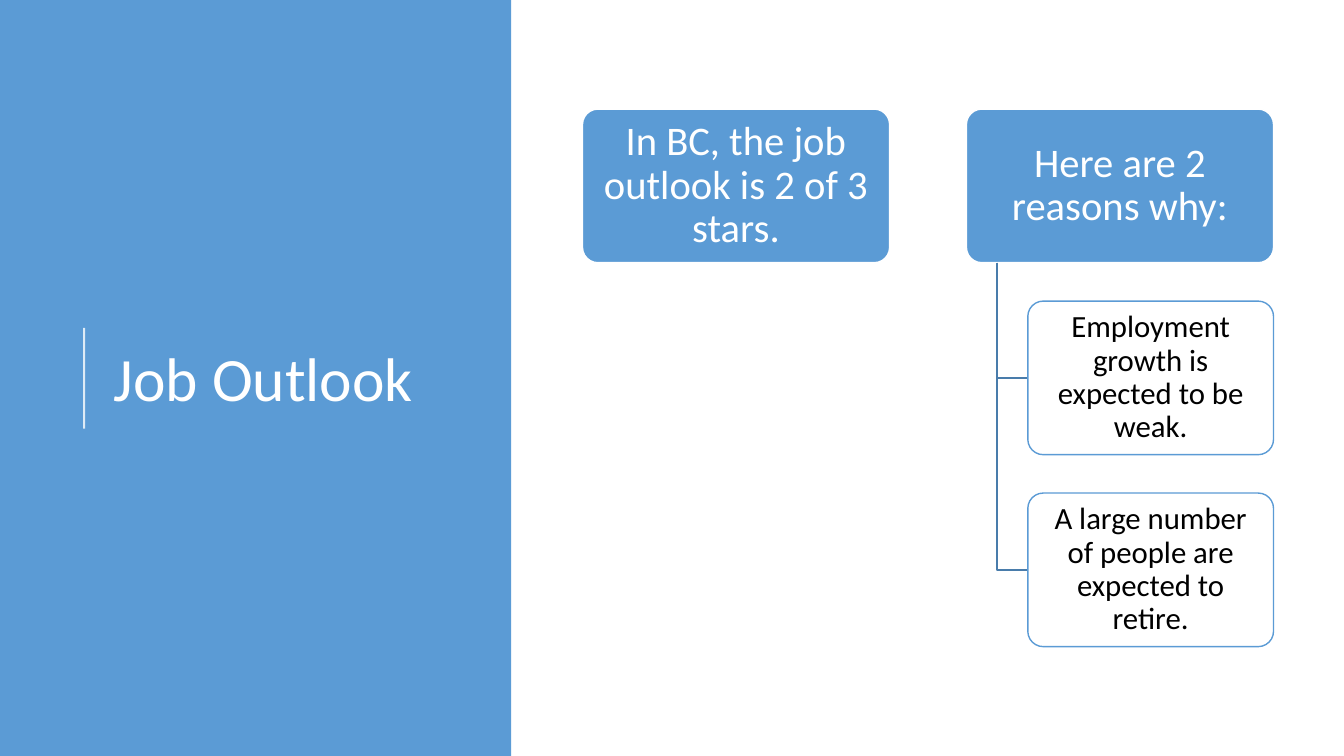
from lxml.etree import SubElement
from pptx import Presentation
from pptx.dml.color import RGBColor
from pptx.enum.shapes import MSO_CONNECTOR as Connector, MSO_SHAPE as Shape
from pptx.enum.text import MSO_ANCHOR as Anchor, PP_ALIGN as Align
from pptx.oxml.ns import qn
from pptx.util import Cm, Pt

TITLE = "Job Outlook"
BRANCHES = [
    ("In BC, the job outlook is 2 of 3 stars.", []),
    ("Here are 2 reasons why:", [
        "Employment growth is expected to be weak.",
        "A large number of people are expected to retire.",
    ]),
]

FONT = "Calibri"
BLUE, ELBOW_BLUE, WHITE, BLACK = "5B9BD5", "497CAB", "FFFFFF", "000000"

# Lengths in centimetres
SLIDE_WIDTH, SLIDE_HEIGHT = 33.87, 19.05
PANEL_WIDTH = 12.88
TREE_LEFT, TREE_TOP = 14.68, 2.75
CARD_WIDTH, CARD_HEIGHT = 7.74, 3.87
COLUMN_STEP = CARD_WIDTH * 1.25
ROW_STEP = CARD_HEIGHT * 1.25
TRUNK_INDENT = CARD_WIDTH * 0.1
REASON_INDENT = CARD_WIDTH * 0.2


def paint(color_format, color, opacity=100):
    color_format.rgb = RGBColor.from_string(color)
    if opacity < 100:
        element = color_format._xFill.find(qn("a:srgbClr"))
        SubElement(element, qn("a:alpha")).set("val", str(opacity * 1000))


def style_line(line, color, width=1, opacity=100):
    line.width = Pt(width)
    line.fill.solid()
    paint(line.fill.fore_color, color, opacity)


def write(shape, text, size, color=WHITE, align=Align.CENTER, margins=(0.25, 0.13)):
    frame = shape.text_frame
    frame.word_wrap = True
    frame.vertical_anchor = Anchor.MIDDLE
    frame.margin_left = frame.margin_right = Cm(margins[0])
    frame.margin_top = frame.margin_bottom = Cm(margins[1])
    paragraph = frame.paragraphs[0]
    paragraph.alignment = align
    paragraph.line_spacing = 0.9
    run = paragraph.add_run()
    run.text = text
    run.font.name = FONT
    run.font.size = Pt(size)
    paint(run.font.color, color)


def add_box(slide, kind, left, top, width, height, fill, outline=None, opacity=100):
    shape = slide.shapes.add_shape(kind, Cm(left), Cm(top), Cm(width), Cm(height))
    shape.shadow.inherit = False
    shape.fill.solid()
    paint(shape.fill.fore_color, fill, opacity)
    if outline:
        style_line(shape.line, outline)
    else:
        shape.line.fill.background()
    return shape


def add_card(slide, left, top, width, fill, outline, opacity=100):
    card = add_box(slide, Shape.ROUNDED_RECTANGLE, left, top, width, CARD_HEIGHT,
                   fill, outline, opacity)
    card.adjustments[0] = 0.1
    return card


def add_elbow(slide, left, top, right, bottom):
    """Draw a line down from a heading card, then right to a reason card."""
    builder = slide.shapes.build_freeform(Cm(left), Cm(top))
    builder.add_line_segments([(Cm(left), Cm(bottom)), (Cm(right), Cm(bottom))], close=False)
    elbow = builder.convert_to_shape()
    elbow.shadow.inherit = False
    elbow.fill.background()
    style_line(elbow.line, ELBOW_BLUE)


def add_title_panel(slide):
    add_box(slide, Shape.RECTANGLE, 0, 0, PANEL_WIDTH, SLIDE_HEIGHT, BLUE)
    rule = slide.shapes.add_connector(Connector.STRAIGHT, Cm(2.12), Cm(10.8), Cm(2.12), Cm(8.26))
    style_line(rule.line, WHITE, 1.5, opacity=80)
    SubElement(rule._element.spPr, qn("a:effectLst"))
    title = slide.shapes.add_textbox(Cm(2.62), Cm(1.98), Cm(9.37), Cm(15.29))
    write(title, TITLE, 44, align=Align.LEFT)


def add_branch(slide, left, heading, reasons):
    card = add_card(slide, left, TREE_TOP, CARD_WIDTH, BLUE, WHITE)
    write(card, heading, 29, margins=(0.27, 0.22))
    reason_left = left + REASON_INDENT
    for row, reason in enumerate(reasons, start=1):
        top = TREE_TOP + row * ROW_STEP
        add_elbow(slide, left + TRUNK_INDENT, TREE_TOP + CARD_HEIGHT,
                  reason_left, top + CARD_HEIGHT / 2)
        card = add_card(slide, reason_left, top, CARD_WIDTH - REASON_INDENT, WHITE, BLUE, 90)
        write(card, reason, 22, color=BLACK, margins=(0.24, 0.19))


def main():
    presentation = Presentation()
    presentation.slide_width = Cm(SLIDE_WIDTH)
    presentation.slide_height = Cm(SLIDE_HEIGHT)
    slide = presentation.slides.add_slide(presentation.slide_layouts[6])
    add_title_panel(slide)
    for column, (heading, reasons) in enumerate(BRANCHES):
        add_branch(slide, TREE_LEFT + column * COLUMN_STEP, heading, reasons)
    presentation.save("out.pptx")


if __name__ == "__main__":
    main()
